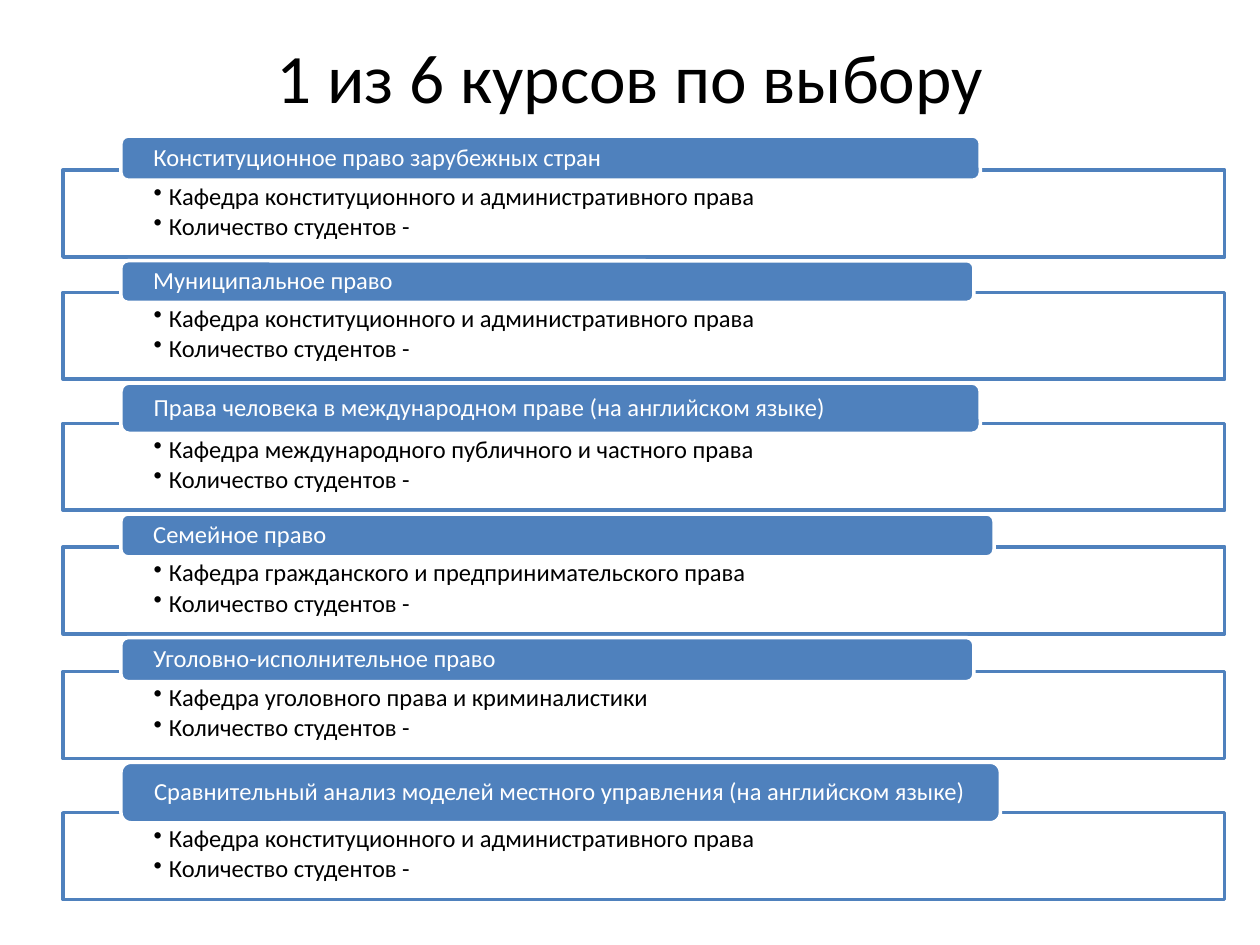
from dataclasses import dataclass

from lxml.etree import SubElement
from pptx import Presentation
from pptx.dml.color import RGBColor
from pptx.enum.shapes import MSO_SHAPE
from pptx.enum.text import MSO_ANCHOR, PP_ALIGN
from pptx.oxml.ns import qn
from pptx.shapes.autoshape import Shape
from pptx.slide import Slide
from pptx.text.text import _Paragraph as Paragraph
from pptx.util import Inches, Pt

BLUE = RGBColor(0x4F, 0x81, 0xBD)
WHITE = RGBColor(0xFF, 0xFF, 0xFF)
BLACK = RGBColor(0, 0, 0)
FONT_NAME = "Calibri"

FIRST_TOP = 1.08
HEADER_LEFT = 0.96
BODY_LEFT, BODY_WIDTH, BODY_HEIGHT = 0.5, 9.22, 0.69
OVERLAP = 0.08
GAP = 0.03
BULLET_INDENT = 0.12

CONSTITUTIONAL = "Кафедра конституционного и административного права"
STUDENTS = "Количество студентов -"


@dataclass(frozen=True)
class Course:
    name: str
    department: str
    header_width: float
    header_height: float


COURSES = [
    Course("Конституционное право зарубежных стран", CONSTITUTIONAL, 6.82, 0.35),
    Course("Муниципальное право", CONSTITUTIONAL, 6.77, 0.33),
    Course("Права человека в международном праве (на английском языке)",
           "Кафедра международного публичного и частного права", 6.82, 0.4),
    Course("Семейное право",
           "Кафедра гражданского и предпринимательского права", 6.93, 0.34),
    Course("Уголовно-исполнительное право",
           "Кафедра уголовного права и криминалистики", 6.77, 0.35),
    Course("Сравнительный анализ моделей местного управления (на английском языке)",
           CONSTITUTIONAL, 6.98, 0.48),
]


def write(paragraph: Paragraph, text: str, size: float, color: RGBColor) -> None:
    run = paragraph.add_run()
    run.text = text
    for name, value in {"name": FONT_NAME, "size": Pt(size)}.items():
        setattr(run.font, name, value)
    run.font.color.rgb = color


def add_bullet(paragraph: Paragraph) -> None:
    properties = paragraph._p.get_or_add_pPr()
    properties.set("marL", str(Inches(BULLET_INDENT)))
    properties.set("indent", str(-Inches(BULLET_INDENT)))
    SubElement(properties, qn("a:buChar")).set("char", "•")


def add_box(slide: Slide, kind: MSO_SHAPE, left: float, top: float, width: float,
            height: float, fill: RGBColor, line: RGBColor) -> Shape:
    shape = slide.shapes.add_shape(
        kind, Inches(left), Inches(top), Inches(width), Inches(height))
    shape.shadow.inherit = False
    shape.fill.solid()
    shape.fill.fore_color.rgb = fill
    shape.line.color.rgb = line
    shape.line.width = Pt(2)
    return shape


def set_frame(shape: Shape, anchor: MSO_ANCHOR, side: float, vertical: float) -> None:
    settings = {
        "word_wrap": True,
        "vertical_anchor": anchor,
        "margin_left": Inches(side),
        "margin_right": Inches(side),
        "margin_top": Inches(vertical),
        "margin_bottom": Inches(vertical),
    }
    for name, value in settings.items():
        setattr(shape.text_frame, name, value)


def format_paragraph(paragraph: Paragraph, level: int, space_after: float) -> None:
    settings = {"alignment": PP_ALIGN.LEFT, "level": level,
                "line_spacing": 0.9, "space_after": Pt(space_after)}
    for name, value in settings.items():
        setattr(paragraph, name, value)


def add_body(slide: Slide, course: Course, top: float) -> None:
    body = add_box(slide, MSO_SHAPE.RECTANGLE, BODY_LEFT, top,
                   BODY_WIDTH, BODY_HEIGHT, WHITE, BLUE)
    fill_color = body.fill._xPr.find(qn("a:solidFill")).find(qn("a:srgbClr"))
    SubElement(fill_color, qn("a:alpha")).set("val", "90000")
    set_frame(body, MSO_ANCHOR.TOP, 0.72, 0.11)
    frame = body.text_frame
    for paragraph, text in ((frame.paragraphs[0], course.department),
                            (frame.add_paragraph(), STUDENTS)):
        format_paragraph(paragraph, 1, 2.1)
        add_bullet(paragraph)
        write(paragraph, text, 14, BLACK)


def add_header(slide: Slide, course: Course, top: float) -> None:
    header = add_box(slide, MSO_SHAPE.ROUNDED_RECTANGLE, HEADER_LEFT, top,
                     course.header_width, course.header_height, BLUE, WHITE)
    set_frame(header, MSO_ANCHOR.MIDDLE, 0.24, 0)
    paragraph = header.text_frame.paragraphs[0]
    format_paragraph(paragraph, 0, 0)
    write(paragraph, course.name, 14, WHITE)


def set_title(slide: Slide, text: str) -> None:
    title = slide.shapes.title
    title.left, title.top = Inches(0.5), Inches(0.3)
    title.width, title.height = Inches(9), Inches(0.61)
    set_frame(title, MSO_ANCHOR.MIDDLE, 0.1, 0.05)
    paragraph = title.text_frame.paragraphs[0]
    paragraph.alignment = PP_ALIGN.CENTER
    write(paragraph, text, 39.6, BLACK)


def main() -> None:
    presentation = Presentation()
    presentation.slide_width, presentation.slide_height = Inches(10), Inches(7.5)
    slide = presentation.slides.add_slide(presentation.slide_layouts[5])
    set_title(slide, "1 из 6 курсов по выбору")

    top = FIRST_TOP
    for course in COURSES:
        body_top = top + course.header_height - OVERLAP
        add_body(slide, course, body_top)
        add_header(slide, course, top)
        top = body_top + BODY_HEIGHT + GAP

    presentation.save("out.pptx")


if __name__ == "__main__":
    main()
